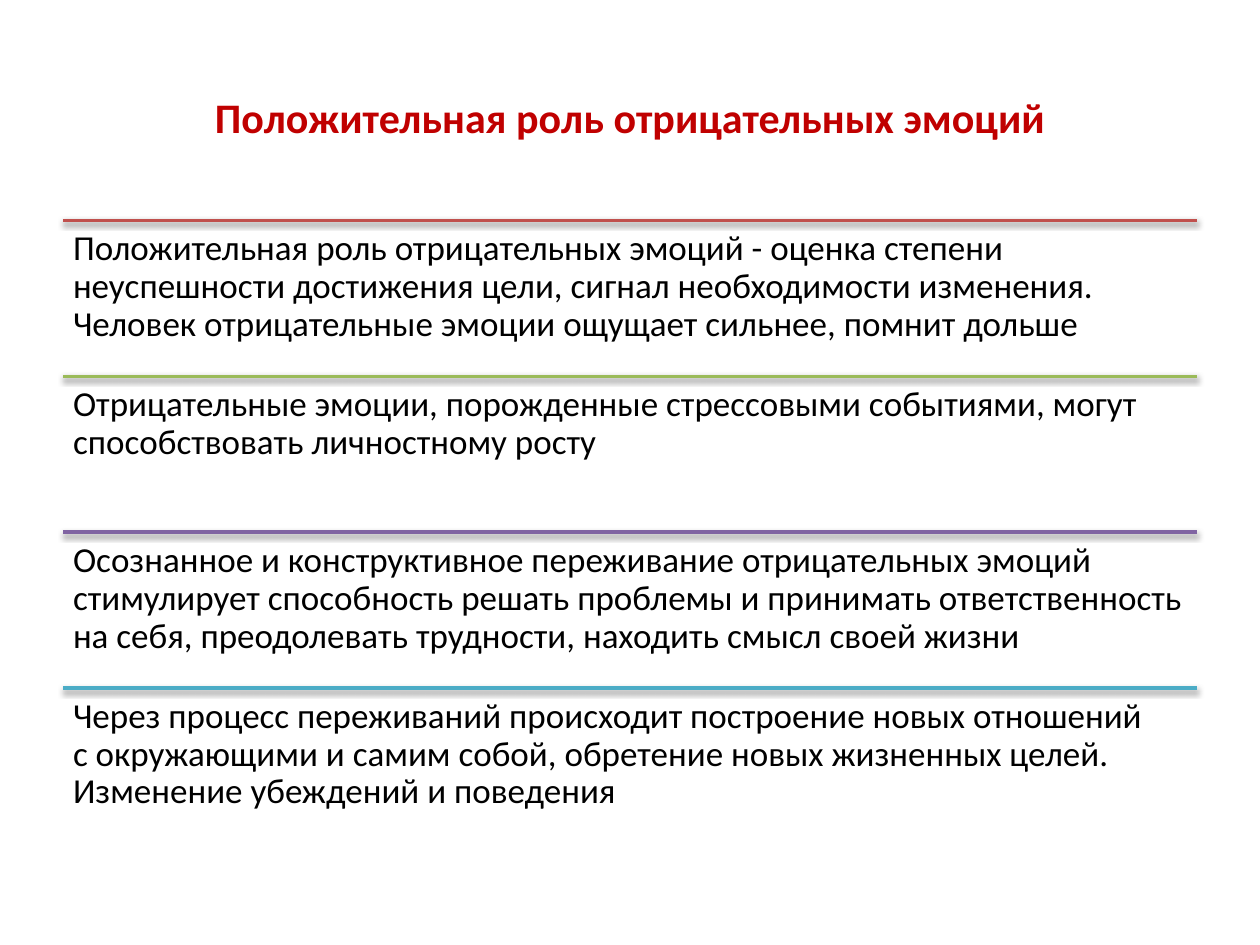
"""Build a slide on the positive role of negative emotions."""
from lxml import etree
from pptx import Presentation
from pptx.dml.color import RGBColor
from pptx.enum.shapes import MSO_CONNECTOR
from pptx.enum.text import MSO_ANCHOR, PP_ALIGN
from pptx.oxml import parse_xml
from pptx.util import Inches, Pt

RED = RGBColor(0xC0, 0x00, 0x00)
BLACK = RGBColor(0x00, 0x00, 0x00)
BRICK = RGBColor(0xC0, 0x50, 0x4D)
GREEN = RGBColor(0x9B, 0xBB, 0x59)
PURPLE = RGBColor(0x80, 0x64, 0xA2)
TEAL = RGBColor(0x4B, 0xAC, 0xC6)

FONT = "Calibri"
LEFT, WIDTH = 0.5, 9
FIRST_TOP, ROW_HEIGHT = 1.75, 1.237
INSET = Inches(0.08)
SHADOW = (
    '<a:effectLst xmlns:a="http://schemas.openxmlformats.org/drawingml/2006/main">'
    '<a:outerShdw blurRad="40000" dist="20000" dir="5400000" rotWithShape="0">'
    '<a:srgbClr val="000000"><a:alpha val="38000"/></a:srgbClr>'
    "</a:outerShdw></a:effectLst>"
)

STATEMENTS = [
    (BRICK, "Положительная роль отрицательных эмоций - оценка степени неуспешности "
            "достижения цели, сигнал необходимости изменения. Человек отрицательные "
            "эмоции ощущает сильнее, помнит дольше"),
    (GREEN, "Отрицательные эмоции, порожденные стрессовыми событиями, могут "
            "способствовать личностному росту"),
    (PURPLE, "Осознанное и конструктивное переживание отрицательных эмоций стимулирует "
             "способность решать проблемы и принимать ответственность на себя, "
             "преодолевать трудности, находить смысл своей жизни"),
    (TEAL, "Через процесс переживаний происходит построение новых отношений \n"
           "с окружающими и самим собой, обретение новых жизненных целей. "
           "Изменение убеждений и поведения"),
]


def add_span(para, text, size, color, bold=False):
    span = para.add_run()
    span.text = text
    span.font.name = FONT
    span.font.size = Pt(size)
    span.font.bold = bold
    span.font.color.rgb = color


deck = Presentation()
deck.slide_width, deck.slide_height = Inches(10), Inches(7.5)
page = deck.slides.add_slide(deck.slide_layouts[5])

title = page.shapes.title
title.left, title.top = Inches(LEFT), Inches(0.3)
title.width, title.height = Inches(WIDTH), Inches(1.25)
title.text_frame.vertical_anchor = MSO_ANCHOR.MIDDLE
heading = title.text_frame.paragraphs[0]
heading.alignment = PP_ALIGN.CENTER
add_span(heading, "Положительная роль отрицательных эмоций", 24, RED, bold=True)

for row, (color, statement) in enumerate(STATEMENTS):
    top = Inches(FIRST_TOP + row * ROW_HEIGHT)
    rule = page.shapes.add_connector(
        MSO_CONNECTOR.STRAIGHT, Inches(LEFT), top, Inches(LEFT + WIDTH), top)
    rule.line.color.rgb = color
    rule.line.width = Pt(2)
    rule._element.spPr.append(parse_xml(SHADOW))

    box = page.shapes.add_textbox(Inches(LEFT), top, Inches(WIDTH), Inches(ROW_HEIGHT))
    frame = box.text_frame
    frame.word_wrap = True
    frame.vertical_anchor = MSO_ANCHOR.TOP
    frame.margin_left = frame.margin_right = INSET
    frame.margin_top = frame.margin_bottom = INSET
    para = frame.paragraphs[0]
    para.alignment = PP_ALIGN.LEFT
    para.line_spacing = 0.9
    for number, part in enumerate(statement.split("\n")):
        if number:
            para.add_line_break()
        add_span(para, part, 20, BLACK)

deck.save("out.pptx")
